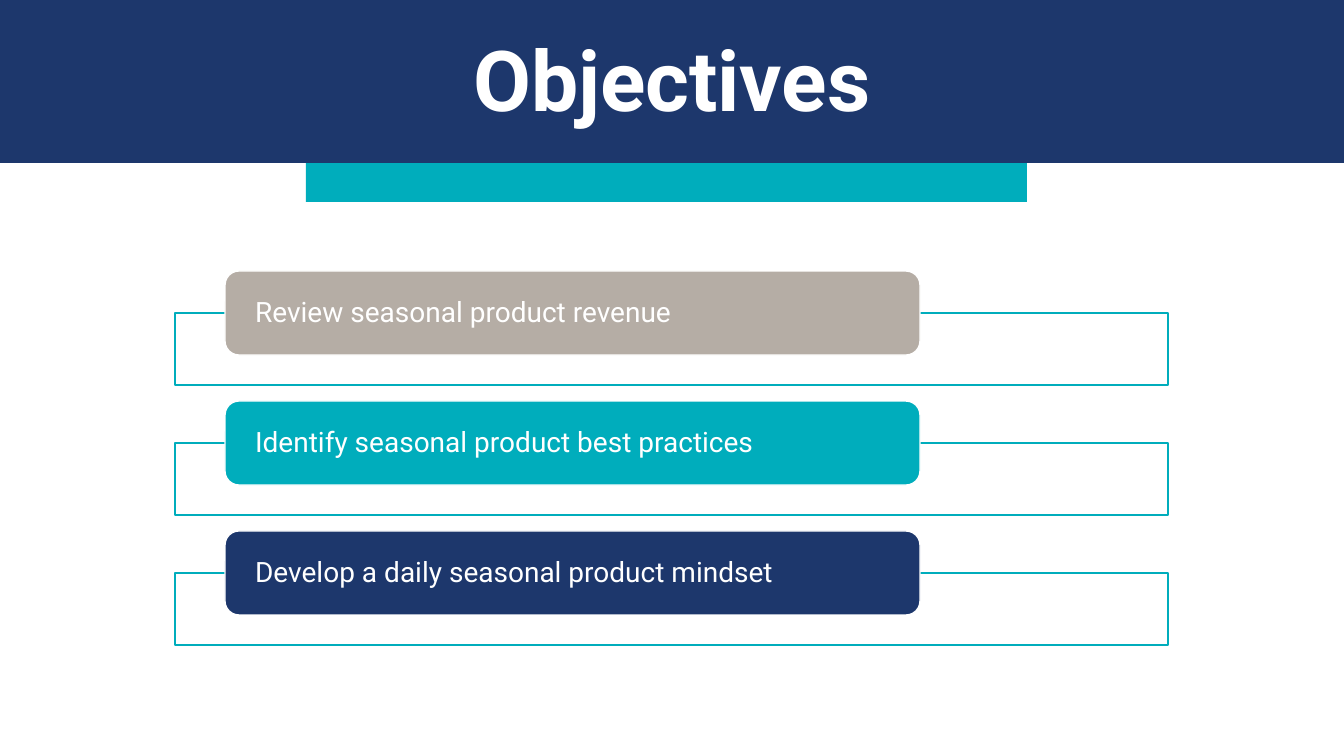
"""Build the Objectives slide with three framed goals."""
from pptx import Presentation
from pptx.dml.color import RGBColor
from pptx.enum.shapes import MSO_SHAPE
from pptx.enum.text import MSO_ANCHOR, PP_ALIGN
from pptx.util import Pt

RECT, ROUND = MSO_SHAPE.RECTANGLE, MSO_SHAPE.ROUNDED_RECTANGLE
LEFT, CENTER = PP_ALIGN.LEFT, PP_ALIGN.CENTER
MIDDLE = MSO_ANCHOR.MIDDLE
PX = 914400 / 100.8
COLORS = {"navy": "1D376C", "teal": "00ADBC", "taupe": "B5ADA5", "white": "FFFFFF"}
GOALS = [
    ("Review seasonal product revenue", "taupe"),
    ("Identify seasonal product best practices", "teal"),
    ("Develop a daily seasonal product mindset", "navy"),
]
ROW_TOP, ROW_STEP = 271, 130


def add_box(kind, box, fill, line=None):
    sp = s.shapes.add_shape(kind, *[round(v * PX) for v in box])
    sp.shadow.inherit = False
    sp.fill.solid()
    sp.fill.fore_color.rgb = RGBColor.from_string(COLORS[fill])
    if line:
        sp.line.color.rgb = RGBColor.from_string(COLORS[line])
        sp.line.width = Pt(1)
    else:
        sp.line.fill.background()
    return sp


def write(sp, text, size, align, spacing, bold=False):
    tf = sp.text_frame
    tf.word_wrap = True
    p = tf.paragraphs[0]
    p.alignment = align
    p.line_spacing = spacing
    r = p.add_run()
    r.text = text
    for name, value in {"name": "Roboto", "size": Pt(size), "bold": bold}.items():
        setattr(r.font, name, value)
    r.font.color.rgb = RGBColor.from_string(COLORS["white"])


prs = Presentation()
prs.slide_width, prs.slide_height = round(1344 * PX), round(756 * PX)
s = prs.slides.add_slide(prs.slide_layouts[6])

add_box(RECT, (306, 139, 721, 63), "teal")
add_box(RECT, (0, 0, 1344, 163), "navy")

title = s.shapes.add_textbox(*[round(v * PX) for v in (0, 32, 1344, 104)])
write(title, "Objectives", 60, CENTER, Pt(65), bold=True)

for i, (goal, color) in enumerate(GOALS):
    top = ROW_TOP + i * ROW_STEP
    add_box(RECT, (175, top + 42, 993, 72), "white", "teal")
    card = add_box(ROUND, (225, top, 695, 84), color, "white")
    tf = card.text_frame
    tf.vertical_anchor = MIDDLE
    margins = {"margin_left": 26, "margin_right": 26, "margin_top": 0, "margin_bottom": 0}
    for name, value in margins.items():
        setattr(tf, name, round(value * PX))
    write(card, goal, 20, LEFT, 0.9)

prs.save("out.pptx")
